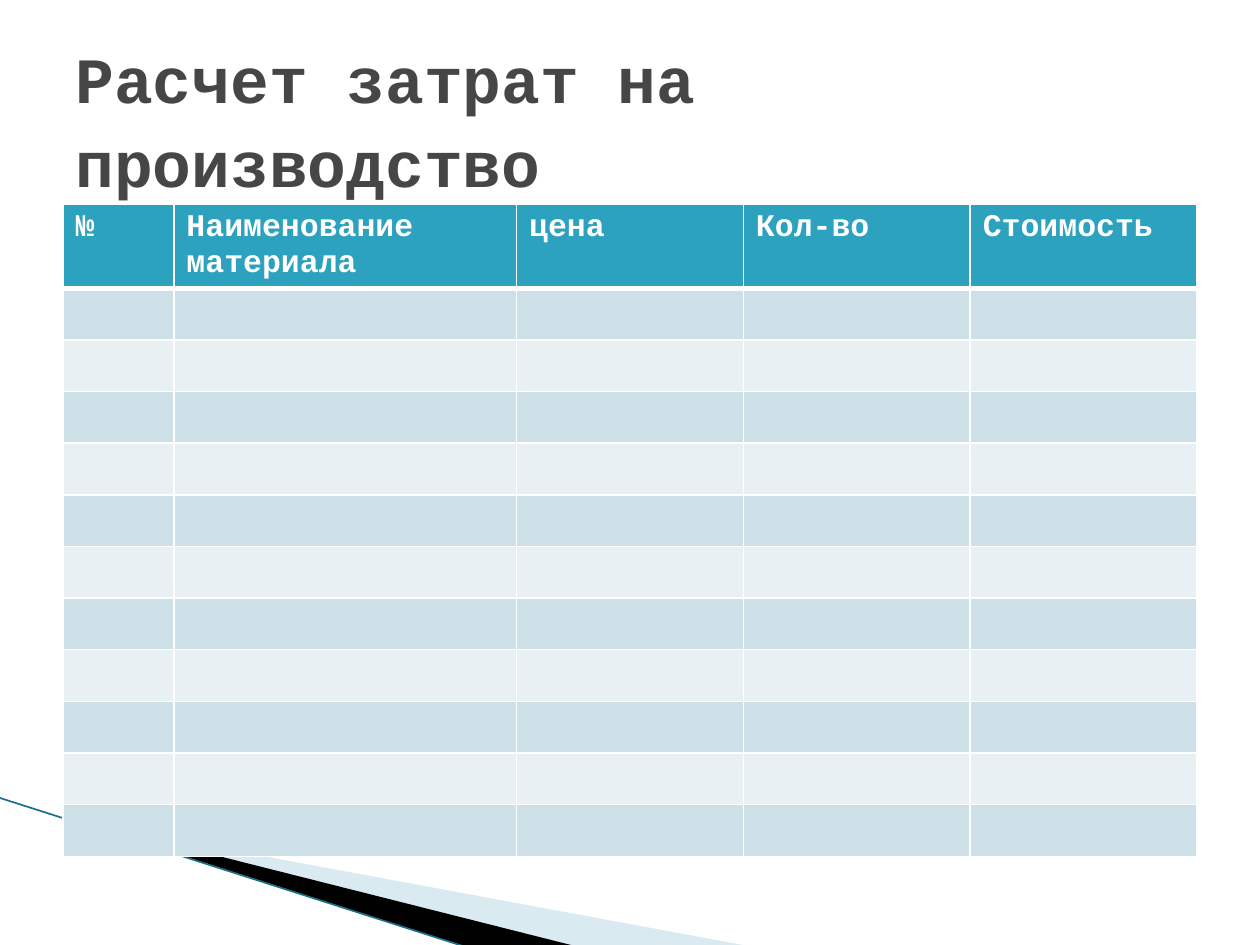
"""Build the production cost table slide."""
from lxml import etree
from pptx import Presentation
from pptx.dml.color import RGBColor
from pptx.enum.shapes import MSO_CONNECTOR
from pptx.enum.text import MSO_ANCHOR
from pptx.oxml.ns import qn
from pptx.util import Inches, Pt

STRAIGHT = MSO_CONNECTOR.STRAIGHT
MIDDLE = MSO_ANCHOR.MIDDLE
FONT = "Courier New"
COLORS = {
    "title": "464646",
    "header": "2DA2BF",
    "band_dark": "CDE0E8",
    "band_light": "E8F0F4",
    "white": "FFFFFF",
    "black": "000000",
    "wedge": "A0CBDC",
    "line": "1B7085",
}


def style_text(paragraph, size, color):
    for run in paragraph.runs:
        run.font.name = FONT
        run.font.size = Pt(size)
        run.font.bold = True
        run.font.color.rgb = RGBColor.from_string(COLORS[color])


def add_borders(cell, bottom_width):
    properties = cell._tc.get_or_add_tcPr()
    widths = {"lnL": 1, "lnR": 1, "lnT": 1, "lnB": bottom_width}
    for position, (side, width) in enumerate(widths.items()):
        border = etree.Element(qn(f"a:{side}"), w=str(Pt(width)))
        fill = etree.SubElement(border, qn("a:solidFill"))
        etree.SubElement(fill, qn("a:srgbClr"), val=COLORS["white"])
        properties.insert(position, border)


presentation = Presentation()
presentation.slide_width = Inches(10)
presentation.slide_height = Inches(7.5)
slide = presentation.slides.add_slide(presentation.slide_layouts[6])

wedges = [
    ("wedge", 40, [(0.55, 6.51), (5.95, 7.51), (4.56, 7.51), (0.55, 6.5)]),
    ("black", 100, [(0.53, 6.49), (4.57, 7.51), (3.72, 7.52), (0.54, 6.5)]),
]
for color, opacity, points in wedges:
    corners = [(Inches(x), Inches(y)) for x, y in points]
    builder = slide.shapes.build_freeform(*corners[0])
    builder.add_line_segments(corners[1:], close=True)
    shape = builder.convert_to_shape()
    shape.shadow.inherit = False
    shape.line.fill.background()
    shape.fill.solid()
    shape.fill.fore_color.rgb = RGBColor.from_string(COLORS[color])
    if opacity < 100:
        fill_color = shape._element.spPr.find(f".//{qn('a:srgbClr')}")
        etree.SubElement(fill_color, qn("a:alpha"), val=str(opacity * 1000))

edge = slide.shapes.add_connector(
    STRAIGHT, Inches(-0.01), Inches(6.33), Inches(3.71), Inches(7.52)
)
edge.line.color.rgb = RGBColor.from_string(COLORS["line"])
edge.line.width = Pt(0.95)
etree.SubElement(edge._element.spPr, qn("a:effectLst"))

headings = ["№", "Наименование материала", "цена", "Кол-во", "Стоимость"]
column_widths = [0.88, 2.72, 1.8, 1.8, 1.8]
row_count = 12
table = slide.shapes.add_table(
    row_count, len(headings), Inches(0.5), Inches(1.62), Inches(9), Inches(5.16)
).table
for column, width in zip(table.columns, column_widths):
    column.width = Inches(width)
for row_index, row in enumerate(table.rows):
    row.height = Inches(0.41 if row_index else 0.65)
    band = "band_dark" if row_index % 2 else "band_light"
    for column_index, cell in enumerate(row.cells):
        cell.fill.solid()
        cell.fill.fore_color.rgb = RGBColor.from_string(
            COLORS[band if row_index else "header"]
        )
        add_borders(cell, 1 if row_index else 3)
        if row_index == 0:
            cell.text_frame.text = headings[column_index]
            style_text(cell.text_frame.paragraphs[0], 18, "white")

title = slide.shapes.add_textbox(Inches(0.5), Inches(0.3), Inches(9), Inches(1.25))
title.text_frame.word_wrap = True
title.text_frame.vertical_anchor = MIDDLE
title.text_frame.text = "Расчет затрат на производство"
title_paragraph = title.text_frame.paragraphs[0]
title_paragraph.line_spacing = 1.08
style_text(title_paragraph, 36.9, "title")

presentation.save("out.pptx")
